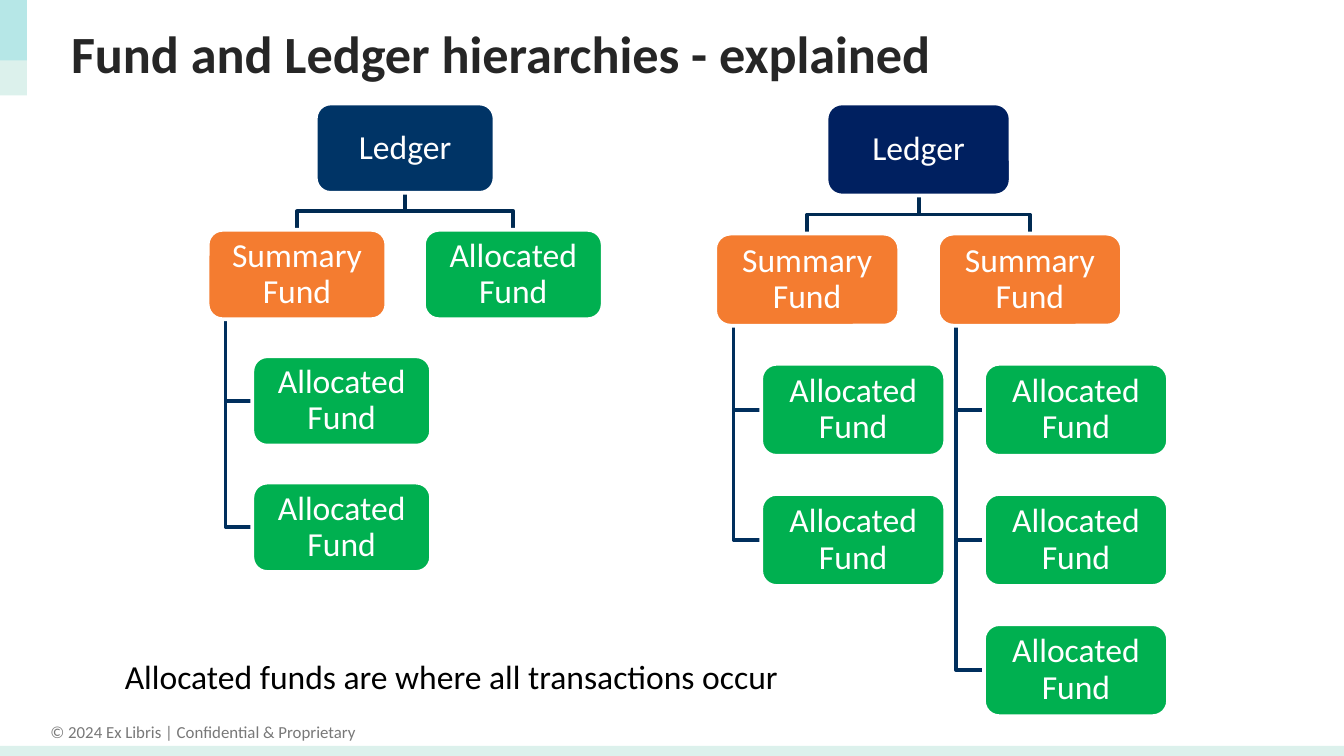
from lxml import etree
from pptx import Presentation
from pptx.dml.color import RGBColor
from pptx.enum import shapes, text
from pptx.oxml.ns import qn
from pptx.util import Inches, Pt

COLORS = {
    "mint": "DCF1EC", "aqua": "50CFDA", "title": "262626", "footer": "787878",
    "black": "000000", "white": "FFFFFF", "navy": "003466", "indigo": "002060",
    "orange": "F47C30", "green": "00B050", "branch": "002A52", "twig": "002F5D",
}
FONT = "Calibri"
SLIDE_WIDTH = Inches(10)
SLIDE_HEIGHT = SLIDE_WIDTH * 9 // 16
LABELS = {"Summary Fund": "orange", "Allocated Fund": "green"}
BANDS = [
    ((0, 5.55, 10, 0.11), "mint", None),
    ((0, 0, 0.2, 0.71), "mint", None),
    ((0, 0, 0.2, 0.45), "aqua", 27),
]
TEXTS = [
    ("© 2024 Ex Libris | Confidential & Proprietary", (0.23, 5.32, 2.56, 0.25),
     {"size": Pt(9)}, "footer", {"word_wrap": False}, text.PP_ALIGN.CENTER),
    ("Fund and Ledger hierarchies - explained", (0.43, 0.08, 9.21, 0.63),
     {"size": Pt(28), "bold": True}, "title",
     {"word_wrap": True, "vertical_anchor": text.MSO_ANCHOR.MIDDLE}, text.PP_ALIGN.LEFT),
    ("Allocated funds are where all transactions occur", (0.83, 4.83, 5.28, 0.4),
     {"size": Pt(18)}, "black", {"word_wrap": True}, text.PP_ALIGN.LEFT),
]
HIERARCHIES = [
    {"left": 2.35, "width": 1.33, "color": "navy",
     "funds": [("Summary Fund", 2), ("Allocated Fund", 0)]},
    {"left": 6.15, "width": 1.37, "color": "indigo",
     "funds": [("Summary Fund", 2), ("Summary Fund", 3)]},
]
LEDGER_TOP = 0.77
BOX_FRAME = {"word_wrap": True, "vertical_anchor": text.MSO_ANCHOR.MIDDLE,
             "margin_left": Inches(0.05), "margin_right": Inches(0.05),
             "margin_top": Inches(0.01), "margin_bottom": Inches(0.01)}


def rgb(name):
    return RGBColor.from_string(COLORS[name])


def set_all(target, values):
    for name, value in values.items():
        setattr(target, name, value)


def write(shape, content, font, color, frame, align):
    set_all(shape.text_frame, frame)
    paragraph = shape.text_frame.paragraphs[0]
    paragraph.text = content
    paragraph.alignment = align
    set_all(paragraph.font, {"name": FONT, **font})
    paragraph.font.color.rgb = rgb(color)
    return paragraph


def add_filled(slide, kind, place, color):
    shape = slide.shapes.add_shape(kind, *map(Inches, place))
    shape.shadow.inherit = False
    shape.fill.solid()
    shape.fill.fore_color.rgb = rgb(color)
    shape.line.fill.background()
    return shape


def add_band(slide, place, color, alpha):
    band = add_filled(slide, shapes.MSO_SHAPE.RECTANGLE, place, color)
    if alpha:
        tint = band.fill._xPr.find(".//" + qn("a:srgbClr"))
        etree.SubElement(tint, qn("a:alpha"), val=str(alpha * 1000))


def add_box(slide, label, place, color):
    box = add_filled(slide, shapes.MSO_SHAPE.ROUNDED_RECTANGLE, place, color)
    box.line.color.rgb = rgb("white")
    box.line.width = Pt(2)
    paragraph = write(box, label, {"size": Pt(18)}, "white", BOX_FRAME, text.PP_ALIGN.CENTER)
    paragraph.line_spacing = 0.9


def add_path(slide, points, color):
    start, *rest = [tuple(map(Inches, point)) for point in points]
    builder = slide.shapes.build_freeform(*start)
    builder.add_line_segments(rest, close=False)
    path = builder.convert_to_shape()
    path.shadow.inherit = False
    path.fill.background()
    path.line.color.rgb = rgb(color)
    path.line.width = Pt(2)


def add_hierarchy(slide, left, width, color, funds):
    height, column, row = width / 2, width * 1.21, width * 0.707
    center = left + width / 2
    ledger_bottom, fund_top = LEDGER_TOP + height, LEDGER_TOP + row
    middle = (ledger_bottom + fund_top) / 2
    boxes = [("Ledger", (left, LEDGER_TOP, width, height), color)]
    paths = []
    for index, (label, children) in enumerate(funds):
        fund_left = left + (index - (len(funds) - 1) / 2) * column
        fund_center = fund_left + width / 2
        boxes.append((label, (fund_left, fund_top, width, height), LABELS[label]))
        paths.append(([(center, ledger_bottom), (center, middle),
                       (fund_center, middle), (fund_center, fund_top)], "branch"))
        trunk, child_left = fund_left + width * 0.1, fund_left + width * 0.25
        for level in range(1, children + 1):
            child_top = fund_top + level * row
            child_middle = child_top + height / 2
            boxes.append(("Allocated Fund", (child_left, child_top, width, height), "green"))
            paths.append(([(trunk, fund_top + height), (trunk, child_middle),
                           (child_left, child_middle)], "twig"))
    for points, line_color in paths:
        add_path(slide, points, line_color)
    for box in boxes:
        add_box(slide, *box)


def main():
    presentation = Presentation()
    presentation.slide_width, presentation.slide_height = SLIDE_WIDTH, SLIDE_HEIGHT
    slide = presentation.slides.add_slide(presentation.slide_layouts[6])
    for band in BANDS:
        add_band(slide, *band)
    for content, place, *style in TEXTS:
        write(slide.shapes.add_textbox(*map(Inches, place)), content, *style)
    for hierarchy in HIERARCHIES:
        add_hierarchy(slide, **hierarchy)
    presentation.save("out.pptx")


if __name__ == "__main__":
    main()
